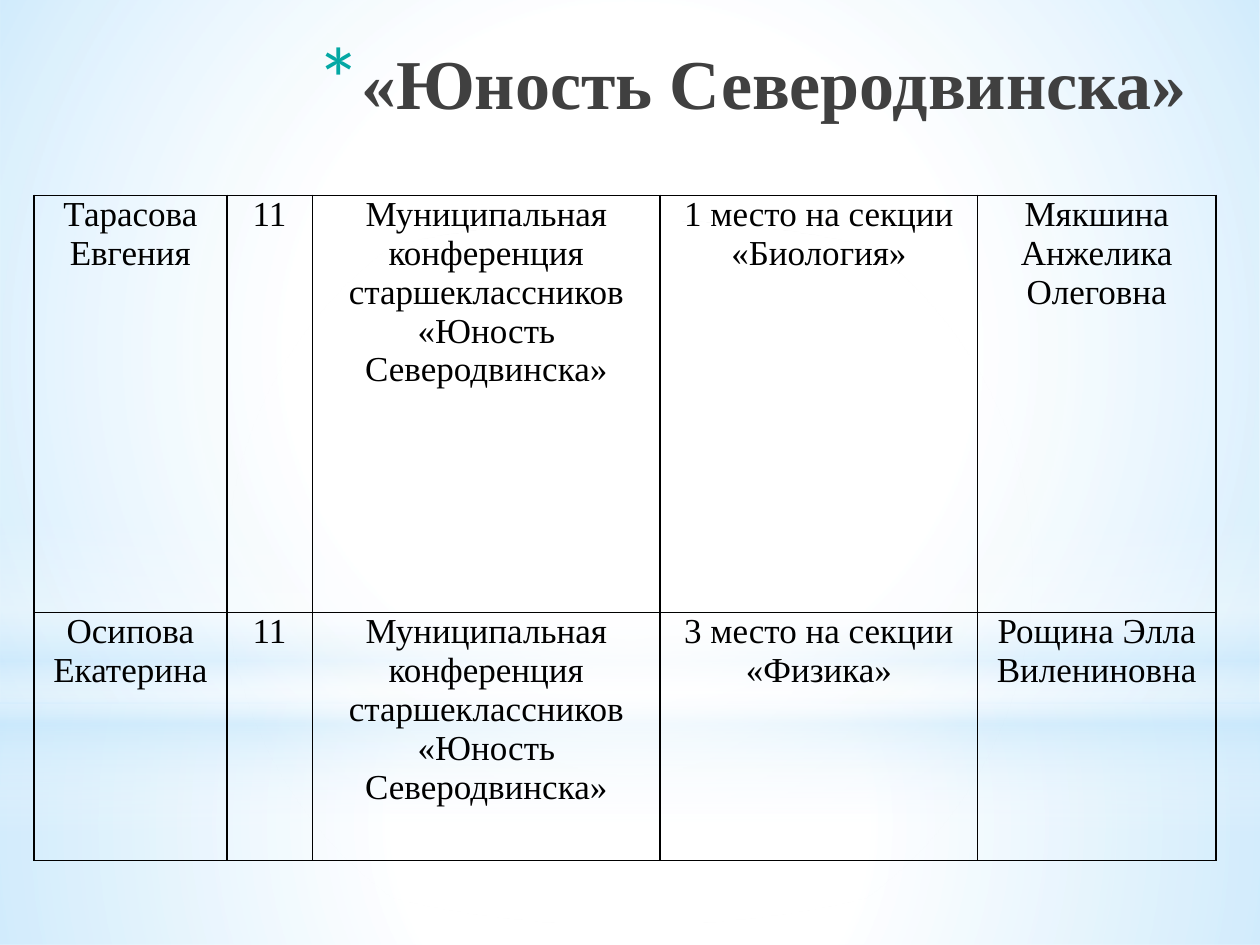
"""Build the conference results slide: a soft sky backdrop, a title and a table."""
from typing import NamedTuple, Optional

from lxml.etree import SubElement
from pptx import Presentation
from pptx.dml.color import RGBColor
from pptx.enum.shapes import MSO_SHAPE
from pptx.enum.text import MSO_ANCHOR, PP_ALIGN
from pptx.oxml import parse_xml
from pptx.oxml.ns import nsdecls, qn
from pptx.util import Inches, Pt

W, H = 10, 7.5
FONT = "Times New Roman"
WHITE, SKY, BLACK, GREY, TEAL = "FFFFFF", "C6E7FC", "000000", "404040", "04A8A4"


class Stop(NamedTuple):
    pos: int
    color: str
    opacity: int


class Glow(NamedTuple):
    shape: MSO_SHAPE
    top: float
    height: float
    stops: list[Stop]
    angle: Optional[int] = None


GLOWS = [
    Glow(MSO_SHAPE.RECTANGLE, 5.58, 1.92,
         [Stop(0, WHITE, 91), Stop(37, WHITE, 76), Stop(100, SKY, 79)]),
    Glow(MSO_SHAPE.RECTANGLE, 0, 5.58,
         [Stop(0, WHITE, 89), Stop(48, WHITE, 62), Stop(100, SKY, 79)]),
    Glow(MSO_SHAPE.RECTANGLE, 4.12, 2.5,
         [Stop(0, WHITE, 0), Stop(29, WHITE, 30), Stop(45, SKY, 40),
          Stop(55, WHITE, 26), Stop(65, SKY, 60), Stop(100, WHITE, 0)], 90),
    Glow(MSO_SHAPE.OVAL, 1.75, 5.58, [Stop(0, WHITE, 100), Stop(56, WHITE, 0)]),
]

EVENT = "Муниципальная конференция старшеклассников «Юность Северодвинска»"
COLS = [1.53, 0.68, 2.76, 2.52, 1.89]
ROWS = [3.31, 1.97]
RESULTS = [
    ["Тарасова Евгения", "11", EVENT, "1 место на секции «Биология»",
     "Мякшина Анжелика Олеговна"],
    ["Осипова Екатерина", "11", EVENT, "3 место на секции «Физика»",
     "Рощина Элла Вилениновна"],
]


def rgb(color: str) -> RGBColor:
    """Turn a hex string into a colour."""
    return RGBColor.from_string(color)


def format_text(p, size: int, color: str, align: PP_ALIGN, bold: bool = False) -> None:
    """Align a paragraph and format its runs."""
    p.alignment = align
    for r in p.runs:
        r.font.name, r.font.size, r.font.bold = FONT, Pt(size), bold
        r.font.color.rgb = rgb(color)


def gradient(glow: Glow):
    """Return a gradient fill element with transparent stops."""
    stops = "".join(
        f'<a:gs pos="{s.pos * 1000}"><a:srgbClr val="{s.color}">'
        f'<a:alpha val="{s.opacity * 1000}"/></a:srgbClr></a:gs>' for s in glow.stops)
    if glow.angle is None:
        course = ('<a:path path="circle"><a:fillToRect l="50000" t="50000" '
                  'r="50000" b="50000"/></a:path>')
    else:
        course = f'<a:lin ang="{glow.angle * 60000}" scaled="0"/>'
    return parse_xml(f'<a:gradFill {nsdecls("a")} rotWithShape="1">'
                     f'<a:gsLst>{stops}</a:gsLst>{course}</a:gradFill>')


def add_glow(slide, glow: Glow) -> None:
    """Draw one full-width band of the backdrop."""
    sp = slide.shapes.add_shape(glow.shape, 0, Inches(glow.top),
                                Inches(W), Inches(glow.height))
    sp.shadow.inherit = False
    sp.line.fill.background()
    sp.fill.background()
    empty = sp._element.spPr.find(qn("a:noFill"))
    sp._element.spPr.replace(empty, gradient(glow))


def add_title(slide, text: str) -> None:
    """Fill the title placeholder and give it an asterisk bullet."""
    sp = slide.shapes.title
    sp.left, sp.top, sp.width, sp.height = map(Inches, (2.4, 0.21, 7.12, 1.25))
    slide.shapes._spTree.append(sp._element)
    tf = sp.text_frame
    tf.text = text
    tf.vertical_anchor = MSO_ANCHOR.TOP
    tf.margin_top = Inches(0.1)
    p = tf.paragraphs[0]
    pPr = p._p.get_or_add_pPr()
    pPr.set("marL", str(Inches(0.35)))
    pPr.set("indent", str(Inches(-0.35)))
    SubElement(SubElement(pPr, qn("a:buClr")), qn("a:srgbClr")).set("val", TEAL)
    SubElement(pPr, qn("a:buSzPct")).set("val", "128000")
    SubElement(pPr, qn("a:buFont")).set("typeface", "+mj-lt")
    SubElement(pPr, qn("a:buChar")).set("char", "*")
    format_text(p, 40, GREY, PP_ALIGN.RIGHT, bold=True)


def fill_cell(cell, text: str) -> None:
    """Write one centred table cell with thin black borders."""
    cell.text = text
    cell.margin_left = cell.margin_right = Inches(0.07)
    cell.margin_top = cell.margin_bottom = 0
    format_text(cell.text_frame.paragraphs[0], 20, BLACK, PP_ALIGN.CENTER)
    tcPr = cell._tc.get_or_add_tcPr()
    for side in ("lnL", "lnR", "lnT", "lnB"):
        ln = SubElement(tcPr, qn(f"a:{side}"), w=str(Pt(1)))
        SubElement(SubElement(ln, qn("a:solidFill")), qn("a:srgbClr")).set("val", BLACK)
    cell.fill.background()


def add_results(slide) -> None:
    """Add the table of results."""
    box = map(Inches, (0.27, 1.55, sum(COLS), sum(ROWS)))
    table = slide.shapes.add_table(len(ROWS), len(COLS), *box).table
    table.first_row = table.horz_banding = False
    for column, width in zip(table.columns, COLS):
        column.width = Inches(width)
    for row, height, texts in zip(table.rows, ROWS, RESULTS):
        row.height = Inches(height)
        for cell, text in zip(row.cells, texts):
            fill_cell(cell, text)


def main() -> None:
    """Build and save the slide."""
    prs = Presentation()
    prs.slide_width, prs.slide_height = Inches(W), Inches(H)
    slide = prs.slides.add_slide(prs.slide_layouts[5])
    for glow in GLOWS:
        add_glow(slide, glow)
    add_results(slide)
    add_title(slide, "«Юность Северодвинска»")
    prs.save("out.pptx")


if __name__ == "__main__":
    main()
